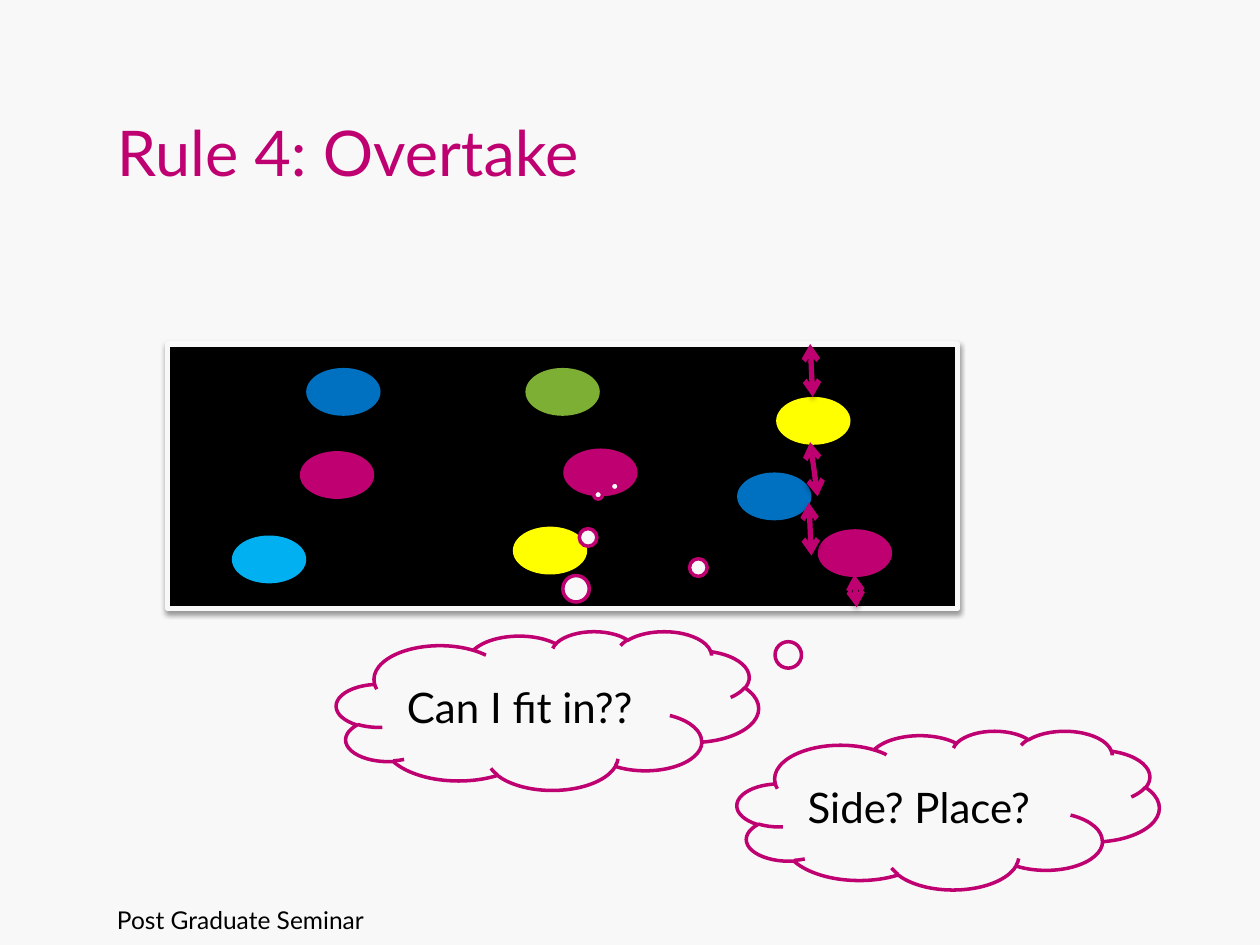
from lxml.etree import SubElement
from pptx import Presentation
from pptx.dml.color import RGBColor
from pptx.enum.shapes import MSO_CONNECTOR as Connector, MSO_SHAPE as Shape
from pptx.enum.text import MSO_ANCHOR as Anchor, PP_ALIGN as Align
from pptx.oxml.ns import qn
from pptx.util import Inches, Pt

BACKGROUND = RGBColor(0xF8, 0xF8, 0xF8)
BLACK = RGBColor(0x00, 0x00, 0x00)
MAGENTA = RGBColor(0xBF, 0x00, 0x71)
BLUE = RGBColor(0x00, 0x70, 0xC0)
SKY = RGBColor(0x00, 0xB0, 0xF0)
YELLOW = RGBColor(0xFF, 0xFF, 0x00)
GREEN = RGBColor(0x7E, 0xAF, 0x35)

CAR_SIZE = (0.59, 0.38)
CLOUD_SIZE = (3.35, 1.26)

# Positions are offsets from the top left corner of the road.
CARS = [
    (3.14, 0.83, MAGENTA), (5.16, 1.47, MAGENTA), (1.10, 0.19, BLUE),
    (0.51, 1.52, SKY), (2.74, 1.45, YELLOW), (2.84, 0.19, GREEN),
    (4.83, 0.42, YELLOW), (4.52, 1.02, BLUE), (1.05, 0.85, MAGENTA),
]
GAPS = [
    (5.10, 0.78, 5.16, 1.21), (5.10, 0, 5.12, 0.42),
    (5.09, 1.26, 5.11, 1.68), (5.45, 1.83, 5.47, 2.09),
]


def inches(*values):
    return [Inches(value) for value in values]


def write(shape, text, size, color, anchor):
    frame = shape.text_frame
    frame.word_wrap = True
    frame.vertical_anchor = anchor
    paragraph = frame.paragraphs[0]
    paragraph.text = text
    paragraph.alignment = Align.LEFT
    font_format = {"name": "Lato", "size": Pt(size)}
    for name, value in font_format.items():
        setattr(paragraph.font, name, value)
    paragraph.font.color.rgb = color


def add_text(slide, box, text, size, color, anchor):
    write(slide.shapes.add_textbox(*inches(*box)), text, size, color, anchor)


def add_filled_shape(slide, kind, box, fill, line=None, width=0):
    shape = slide.shapes.add_shape(kind, *inches(*box))
    shape.shadow.inherit = False
    shape.fill.solid()
    shape.fill.fore_color.rgb = fill
    if line is None:
        shape.line.fill.background()
    else:
        shape.line.color.rgb = line
        shape.line.width = Pt(width)
    return shape


def add_shadow(properties, distance, opacity):
    """Cast a soft black shadow straight down."""
    effects = properties.find(qn("a:effectLst"))
    if effects is None:
        effects = SubElement(properties, qn("a:effectLst"))
    shadow = SubElement(effects, qn("a:outerShdw"), blurRad=str(Pt(3.1)),
                        dist=str(Pt(distance)), dir="5400000", rotWithShape="0")
    color = SubElement(shadow, qn("a:srgbClr"), val=str(BLACK))
    SubElement(color, qn("a:alpha"), val=str(opacity * 1000))


def add_gap_arrow(slide, start, end):
    arrow = slide.shapes.add_connector(Connector.STRAIGHT, *inches(*start, *end))
    arrow.line.color.rgb = MAGENTA
    arrow.line.width = Pt(3)
    properties = arrow.element.spPr
    for tag in ("a:headEnd", "a:tailEnd"):
        SubElement(properties.find(qn("a:ln")), qn(tag), type="arrow")
    add_shadow(properties, 1.8, 35)


def add_road(slide, box):
    left, top = box[:2]
    road = add_filled_shape(slide, Shape.RECTANGLE, box, BLACK, BACKGROUND, 3)
    add_shadow(road.element.spPr, 1.6, 38)
    for x, y, color in CARS:
        add_filled_shape(slide, Shape.OVAL, (left + x, top + y, *CAR_SIZE), color)
    for x1, y1, x2, y2 in GAPS:
        add_gap_arrow(slide, (left + x1, top + y1), (left + x2, top + y2))


def add_thought(slide, box, pointer, text):
    cloud = add_filled_shape(slide, Shape.CLOUD_CALLOUT, box, BACKGROUND, MAGENTA, 2)
    for index, value in enumerate(pointer):
        cloud.adjustments[index] = value
    write(cloud, text, 24, BLACK, Anchor.MIDDLE)


def main():
    presentation = Presentation()
    presentation.slide_width, presentation.slide_height = inches(10, 7.5)
    slide = presentation.slides.add_slide(presentation.slide_layouts[6])
    slide.background.fill.solid()
    slide.background.fill.fore_color.rgb = BACKGROUND

    add_text(slide, (0.83, 7.13, 6.93, 0.52), "Post Graduate Seminar", 14, BLACK, Anchor.TOP)
    add_text(slide, (0.83, 0.3, 6.77, 1.25), "Rule 4: Overtake", 36, MAGENTA, Anchor.BOTTOM)
    add_road(slide, (1.33, 2.73, 6.27, 2.1))
    add_thought(slide, (2.67, 5.01, *CLOUD_SIZE), (0.12, -1.36), "Can I fit in??")
    add_thought(slide, (5.85, 5.8, *CLOUD_SIZE), (-0.79, -2.04), "Side? Place?")
    presentation.save("out.pptx")


if __name__ == "__main__":
    main()
